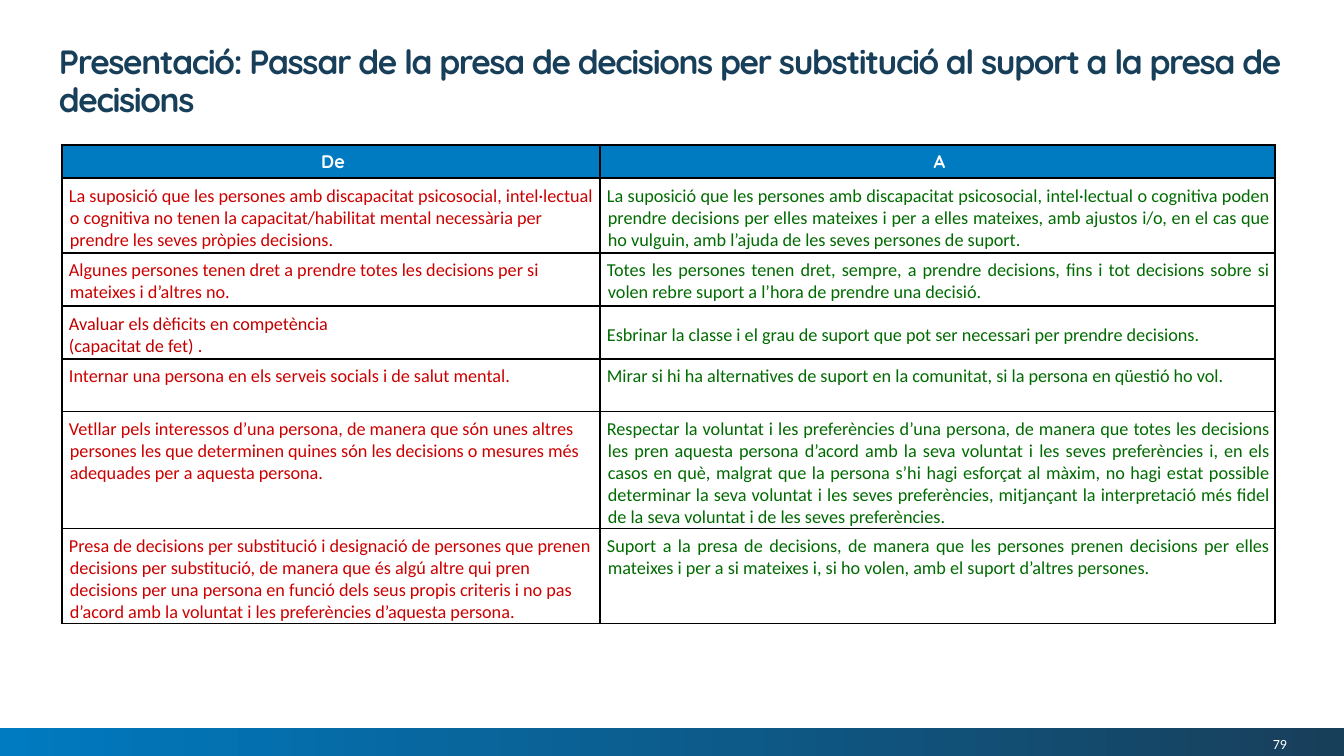
from lxml import etree
from pptx import Presentation
from pptx.dml.color import RGBColor
from pptx.enum.shapes import MSO_SHAPE
from pptx.enum.text import MSO_ANCHOR, PP_ALIGN
from pptx.oxml.ns import qn
from pptx.util import Pt

SCALE = 914400 / 100.8  # EMU per px
LEFT, CENTER, RIGHT, JUSTIFY = PP_ALIGN.LEFT, PP_ALIGN.CENTER, PP_ALIGN.RIGHT, PP_ALIGN.JUSTIFY
TOP, MIDDLE = MSO_ANCHOR.TOP, MSO_ANCHOR.MIDDLE
RECTANGLE = MSO_SHAPE.RECTANGLE
COLORS = {
    "blue": "007AC0", "navy": "183F5A", "white": "FFFFFF", "black": "000000",
    "red": "CC0000", "dark red": "C00000", "green": "006B00",
}


def px(*lengths):
    return [round(length * SCALE) for length in lengths]


def write(frame, text, *, size=13, font="Calibri", color="black", bold=False, align=LEFT,
          margin=0, indent=0, letter_spacing=0, line_spacing=None):
    """Write each line of text as a paragraph of the frame."""
    frame.word_wrap = True
    for index, line in enumerate(text.split("\n")):
        para = frame.add_paragraph() if index else frame.paragraphs[0]
        para.alignment = align
        if line_spacing:
            para.line_spacing = line_spacing
        properties = para._p.get_or_add_pPr()
        properties.set("marL", str(px(margin)[0]))
        properties.set("indent", str(px(indent)[0]))
        span = para.add_run()
        span.text = line
        span.font.size = Pt(size)
        span.font.name = font
        span.font.bold = bold
        span.font.color.rgb = RGBColor.from_string(COLORS[color])
        if letter_spacing:
            span._r.get_or_add_rPr().set("spc", str(letter_spacing * 100))


deck = Presentation()
deck.slide_width, deck.slide_height = px(1344, 756)
page = deck.slides.add_slide(deck.slide_layouts[6])

# Footer band and page number
band = page.shapes.add_shape(RECTANGLE, *px(0, 728, 1344, 28))
band.shadow.inherit = False
band.line.fill.background()
band.fill.gradient()
band.fill.gradient_angle = 0
for stop, name, position in zip(band.fill.gradient_stops, ("blue", "navy"), (0, 1)):
    stop.color.rgb = RGBColor.from_string(COLORS[name])
    stop.position = position

number = page.shapes.add_textbox(*px(1106, 732, 181, 24)).text_frame
number.margin_left = number.margin_top = number.margin_right = number.margin_bottom = 0
number.vertical_anchor = MIDDLE
write(number, "79", size=10, color="white", align=RIGHT)

# Title
title = page.shapes.add_textbox(*px(49, 39, 1259, 45)).text_frame
write(title, "Presentació: Passar de la presa de decisions per substitució al suport a la presa de decisions",
      size=24, font="Quicksand", color="navy", bold=True, letter_spacing=-1, line_spacing=0.95)

# Table: row height, then text, colour and anchor of the left and right cells
ROWS = [
    (33, ("De", "white", MIDDLE), ("A", "white", MIDDLE)),
    (75,
     ("La suposició que les persones amb discapacitat psicosocial, intel·lectual o cognitiva no tenen "
      "la capacitat/habilitat mental necessària per prendre les seves pròpies decisions.", "red", MIDDLE),
     ("La suposició que les persones amb discapacitat psicosocial, intel·lectual o cognitiva poden "
      "prendre decisions per elles mateixes i per a elles mateixes, amb ajustos i/o, en el cas que ho "
      "vulguin, amb l’ajuda de les seves persones de suport.", "green", MIDDLE)),
    (53,
     ("Algunes persones tenen dret a prendre totes les decisions per si mateixes i d’altres no.",
      "red", TOP),
     ("Totes les persones tenen dret, sempre, a prendre decisions, fins i tot decisions sobre si volen "
      "rebre suport a l’hora de prendre una decisió.", "green", TOP)),
    (53,
     ("Avaluar els dèficits en competència\n(capacitat de fet) .", "dark red", MIDDLE),
     ("Esbrinar la classe i el grau de suport que pot ser necessari per prendre decisions.",
      "green", MIDDLE)),
    (53,
     ("Internar una persona en els serveis socials i de salut mental.", "red", TOP),
     ("Mirar si hi ha alternatives de suport en la comunitat, si la persona en qüestió ho vol.",
      "green", TOP)),
    (117,
     ("Vetllar pels interessos d’una persona, de manera que són unes altres persones les que determinen "
      "quines són les decisions o mesures més adequades per a aquesta persona.", "red", TOP),
     ("Respectar la voluntat i les preferències d’una persona, de manera que totes les decisions les pren "
      "aquesta persona d’acord amb la seva voluntat i les seves preferències i, en els casos en què, "
      "malgrat que la persona s’hi hagi esforçat al màxim, no hagi estat possible determinar la seva "
      "voluntat i les seves preferències, mitjançant la interpretació més fidel de la seva voluntat i de "
      "les seves preferències.", "green", MIDDLE)),
    (95,
     ("Presa de decisions per substitució i designació de persones que prenen decisions per substitució, "
      "de manera que és algú altre qui pren decisions per una persona en funció dels seus propis criteris "
      "i no pas d’acord amb la voluntat i les preferències d’aquesta persona.", "red", TOP),
     ("Suport a la presa de decisions, de manera que les persones prenen decisions per elles mateixes i "
      "per a si mateixes i, si ho volen, amb el suport d’altres persones.", "green", TOP)),
]
COLUMNS = (538, 675)
height = sum(row[0] for row in ROWS)
table = page.shapes.add_table(len(ROWS), len(COLUMNS), *px(62, 145, sum(COLUMNS), height)).table
table.first_row = table.horz_banding = False
for column, width in zip(table.columns, px(*COLUMNS)):
    column.width = width

for row_index, (row_height, *entries) in enumerate(ROWS):
    table.rows[row_index].height = px(row_height)[0]
    for column_index, (text, color, anchor) in enumerate(entries):
        cell = table.cell(row_index, column_index)
        cell.vertical_anchor = anchor
        if row_index == 0:
            cell.fill.solid()
            cell.fill.fore_color.rgb = RGBColor.from_string(COLORS["blue"])
            write(cell.text_frame, text, font="Quicksand", color=color, bold=True,
                  align=CENTER, margin=4)
        else:
            cell.fill.background()
            cell.margin_left, cell.margin_top, cell.margin_right, cell.margin_bottom = px(4, 6, 6, 0)
            write(cell.text_frame, text, color=color, align=JUSTIFY if column_index else LEFT,
                  margin=4, indent=-1)
        # Borders come before the fill in the cell properties
        properties = cell._tc.get_or_add_tcPr()
        for position, side in enumerate(("lnL", "lnR", "lnT", "lnB")):
            border = etree.Element(qn("a:" + side), w=str(Pt(1)))
            fill = etree.SubElement(border, qn("a:solidFill"))
            etree.SubElement(fill, qn("a:srgbClr"), val=COLORS["black"])
            properties.insert(position, border)

deck.save("out.pptx")
